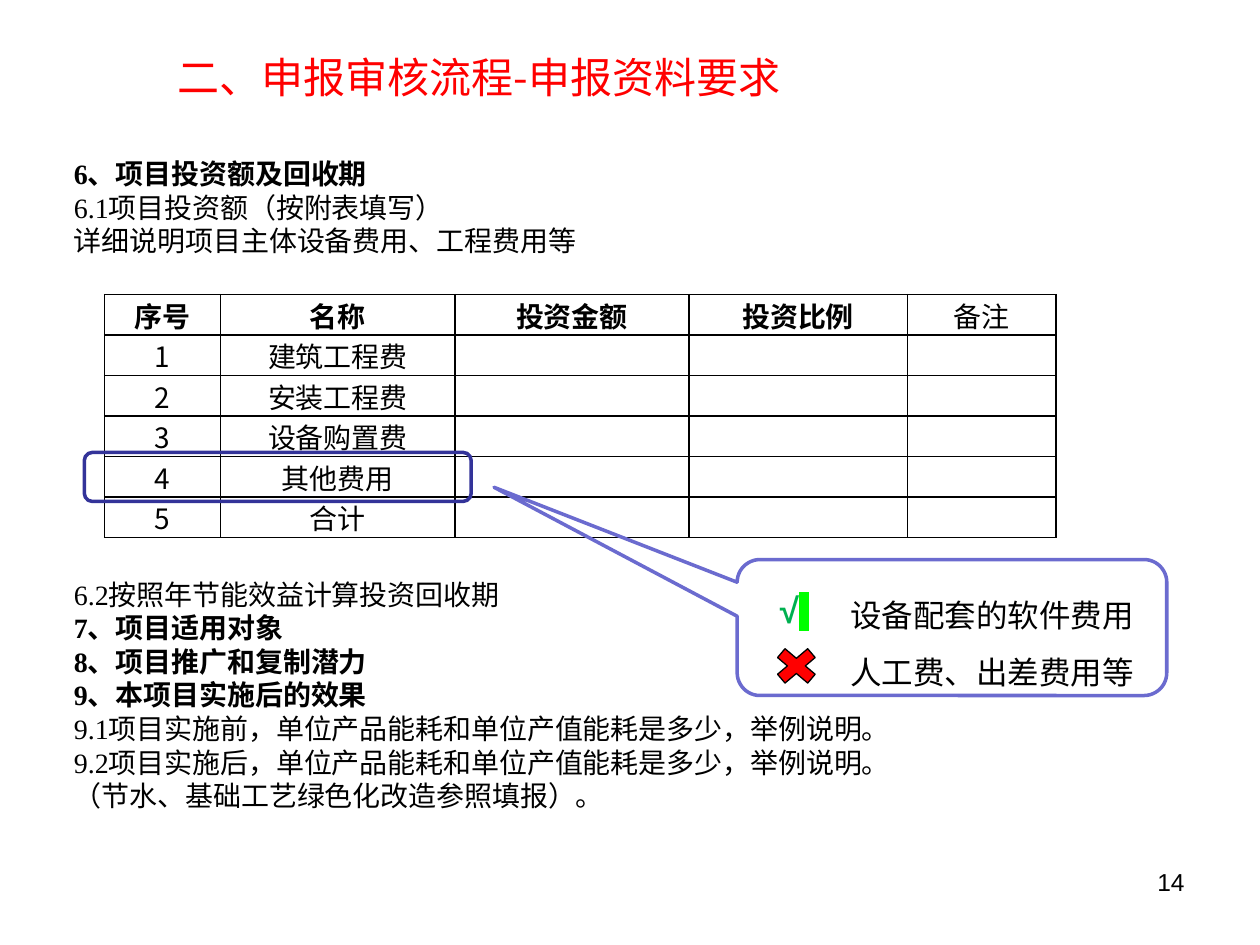
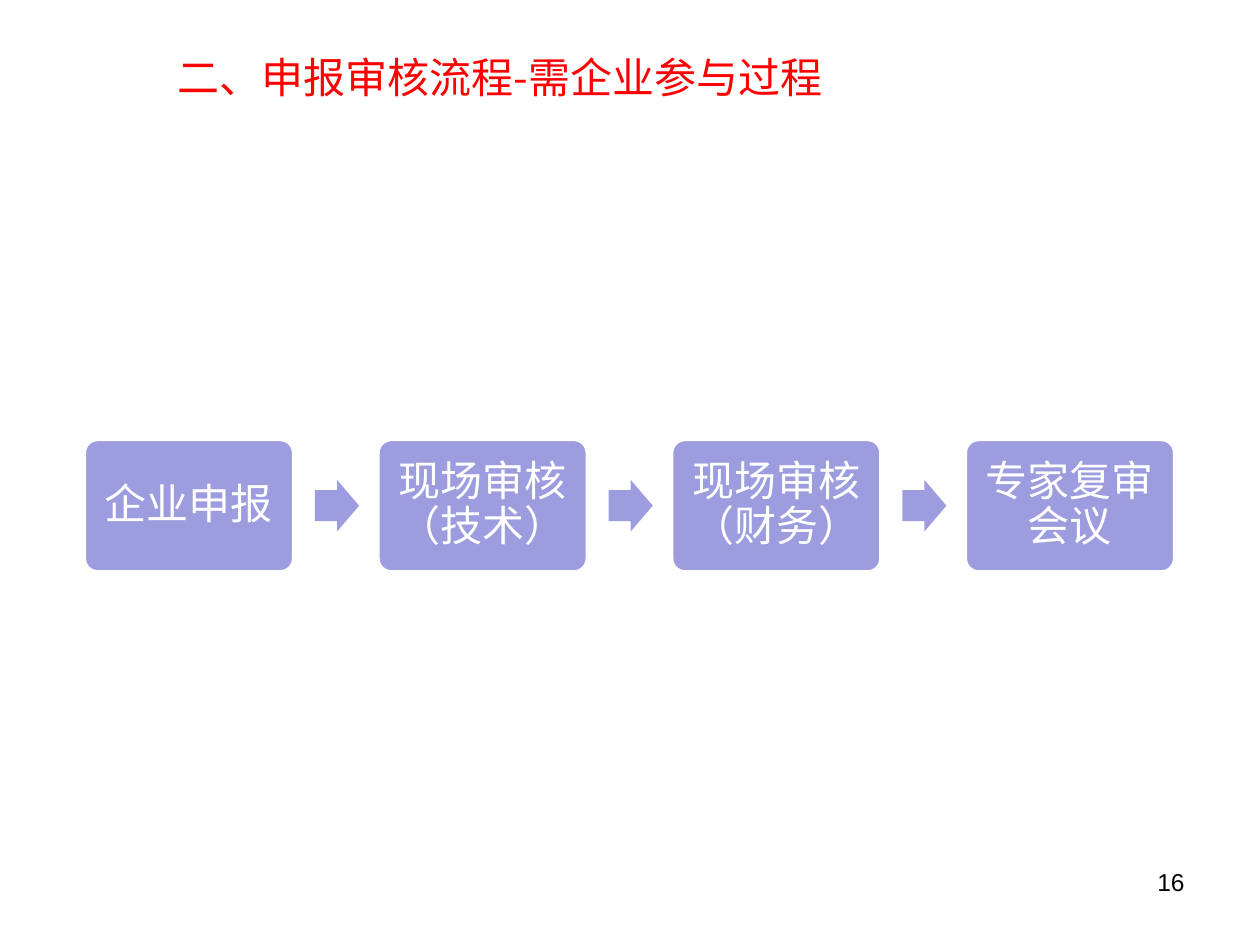
from dataclasses import dataclass
from lxml import etree
from pptx import Presentation
from pptx import util as u
from pptx.dml import color
from pptx.enum import shapes, text
from pptx.oxml import ns


@dataclass(frozen=True)
class Theme:
    red: str = "FF0000"
    black: str = "000000"
    white: str = "FFFFFF"
    navy: str = "333399"
    violet: str = "6B6BCF"
    lilac: str = "9C9CDF"
    green: str = "00B050"
    lime: str = "00FF00"
    sans: str = "Arial"
    serif: str = "Times New Roman"
    han: str = "Noto Sans CJK SC"
    head: int = 24
    mark: int = 20
    note: int = 18
    body: int = 16
    foot: int = 14


T = Theme()
KIND = shapes.MSO_SHAPE
MID = text.MSO_ANCHOR.MIDDLE
TOP = text.MSO_ANCHOR.TOP
LEFT = text.PP_ALIGN.LEFT
CENTER = text.PP_ALIGN.CENTER
RIGHT = text.PP_ALIGN.RIGHT

INTRO = [
    ("6、项目投资额及回收期", True),
    ("6.1项目投资额（按附表填写）", False),
    ("详细说明项目主体设备费用、工程费用等", False),
]
REST = [
    ("6.2按照年节能效益计算投资回收期", False),
    ("7、项目适用对象", True),
    ("8、项目推广和复制潜力", True),
    ("9、本项目实施后的效果", True),
    ("9.1项目实施前，单位产品能耗和单位产值能耗是多少，举例说明。", False),
    ("9.2项目实施后，单位产品能耗和单位产值能耗是多少，举例说明。", False),
    ("（节水、基础工艺绿色化改造参照填报）。", False),
]
HEADS = ["序号", "名称", "投资金额", "投资比例", "备注"]
COSTS = ["建筑工程费", "安装工程费", "设备购置费", "其他费用", "合计"]
WIDTHS = [2.34, 4.72, 4.72, 4.4, 3.0]
STEPS = ["企业申报", "现场审核（技术）", "现场审核（财务）", "专家复审会议"]


def rgb(code):
    return color.RGBColor.from_string(code)


def cms(box):
    return [u.Cm(n) for n in box]


def sub(parent, tag, **attrs):
    return etree.SubElement(parent, ns.qn(tag), **attrs)


def stroke(parent, tag, code, width, spot):
    line = sub(parent, tag, w=str(u.Pt(width)))
    sub(sub(line, "a:solidFill"), "a:srgbClr", val=code)
    parent.insert(spot, line)


def write(para, words, size, face, tint=T.black, bold=False):
    run = para.add_run()
    run.text = words
    run.font.size = u.Pt(size)
    run.font.name = face
    run.font.bold = bold
    run.font.color.rgb = rgb(tint)
    sub(run.font._element, "a:ea", typeface=T.han)
    return run


def frame(slide, box, anchor=TOP):
    area = slide.shapes.add_textbox(*cms(box)).text_frame
    area.word_wrap = True
    area.vertical_anchor = anchor
    return area


def lines(area, items, size, face, align=LEFT, indent=0, space=None):
    for i, (words, bold) in enumerate(items):
        para = area.add_paragraph() if i else area.paragraphs[0]
        para.alignment = align
        para.line_spacing = space
        if indent:
            para._p.get_or_add_pPr().set("indent", str(u.Cm(indent)))
        write(para, words, size, face, bold=bold)


def shape(slide, kind, box, fill=None, edge=None, width=2, adjust=()):
    item = slide.shapes.add_shape(kind, *cms(box))
    item.shadow.inherit = False
    for i, value in enumerate(adjust):
        item.adjustments[i] = value
    if fill:
        item.fill.solid()
        item.fill.fore_color.rgb = rgb(fill)
    else:
        item.fill.background()
    if edge:
        item.line.color.rgb = rgb(edge)
        item.line.width = u.Pt(width)
    else:
        item.line.fill.background()
    return item


def base(deck, title, number):
    slide = deck.slides.add_slide(deck.slide_layouts[6])
    area = frame(slide, (3.33, 0, 21.5, 3.1), MID)
    write(area.paragraphs[0], title, T.head, T.han, T.red)
    foot = frame(slide, (18.21, 17.35, 5.92, 1.32))
    lines(foot, [(number, False)], T.foot, T.sans, RIGHT)
    return slide


def prose(slide, box, items, anchor):
    lines(frame(slide, box, anchor), items, T.body, T.serif, indent=1.24)


def grid(slide, box):
    rows = [HEADS] + [[str(i), cost, "", "", ""] for i, cost in enumerate(COSTS, 1)]
    table = slide.shapes.add_table(len(rows), len(HEADS), *cms(box)).table
    table.first_row = table.horz_banding = False
    for column, width in zip(table.columns, WIDTHS):
        column.width = u.Cm(width)
    for r, row in enumerate(rows):
        for c, words in enumerate(row):
            cell = table.cell(r, c)
            cell.fill.background()
            cell.vertical_anchor = MID
            cell.margin_left = cell.margin_right = u.Cm(0.18)
            cell.margin_top = cell.margin_bottom = 0
            for i, side in enumerate("LRTB"):
                stroke(cell._tc.get_or_add_tcPr(), f"a:ln{side}", T.black, 1, i)
            if words:
                para = cell.text_frame.paragraphs[0]
                para.alignment = CENTER
                face = T.han if r and not c else T.serif
                write(para, words, T.body, face, bold=r == 0 and c < 4)


def callout(slide, box):
    x, y, w, h = box
    bubble = shape(slide, KIND.ROUNDED_RECTANGULAR_CALLOUT, box, edge=T.violet,
                   adjust=(1.066, 1.032, 0.167))
    bubble.rotation = 180
    area = frame(slide, (x + 2.03, y + 0.23, 6.4, 2.41))
    notes = [("设备配套的软件费用", False), ("人工费、出差费用等", False)]
    lines(area, notes, T.note, T.sans, space=1.5)
    shape(slide, KIND.MATH_MULTIPLY, (x + 0.61, y + 1.65, 1.17, 0.99),
          T.red, T.black, 0.75)
    para = frame(slide, (x + 0.61, y + 0.46, 1.42, 1.12)).paragraphs[0]
    tick = write(para, "√", T.mark, T.sans, T.green, True)
    stroke(tick.font._element, "a:ln", T.green, 0.75, 0)
    props = write(para, " ", T.mark, T.sans, bold=True).font._element
    glow = sub(props, "a:highlight")
    sub(glow, "a:srgbClr", val=T.lime)
    props.insert(1, glow)


def flow(slide, box):
    x, y, w, h = box
    wide, pitch = 4.22, 5.92
    for i, words in enumerate(STEPS):
        left = x + i * pitch
        node = shape(slide, KIND.ROUNDED_RECTANGLE, (left, y, wide, h),
                     T.lilac, T.white, adjust=(0.1,))
        area = node.text_frame
        area.word_wrap = True
        area.vertical_anchor = MID
        area.margin_left = area.margin_right = u.Cm(0.25)
        para = area.paragraphs[0]
        para.alignment = CENTER
        para.line_spacing = 0.9
        write(para, words, T.head, T.sans, T.white)
        if i < len(STEPS) - 1:
            shape(slide, KIND.RIGHT_ARROW, (left + 4.65, y + h / 2 - 0.52, 0.89, 1.04),
                  T.lilac, adjust=(0.6, 0.5))


def main():
    deck = Presentation()
    deck.slide_width, deck.slide_height = cms((25.4, 19.05))
    costs = base(deck, "二、申报审核流程-申报资料要求", "14")
    prose(costs, (0, 3.02, 25.4, 2.31), INTRO, MID)
    grid(costs, (2.11, 5.94, 19.18, 4.9))
    prose(costs, (0, 11.51, 20, 5.74), REST, TOP)
    shape(costs, KIND.ROUNDED_RECTANGLE, (1.7, 9.12, 7.8, 0.99), edge=T.navy)
    callout(costs, (14.86, 11.28, 8.66, 2.74))
    steps = base(deck, "二、申报审核流程-需企业参与过程", "16")
    flow(steps, (1.7, 8.86, 21.98, 2.67))
    deck.save("out.pptx")


if __name__ == "__main__":
    main()
